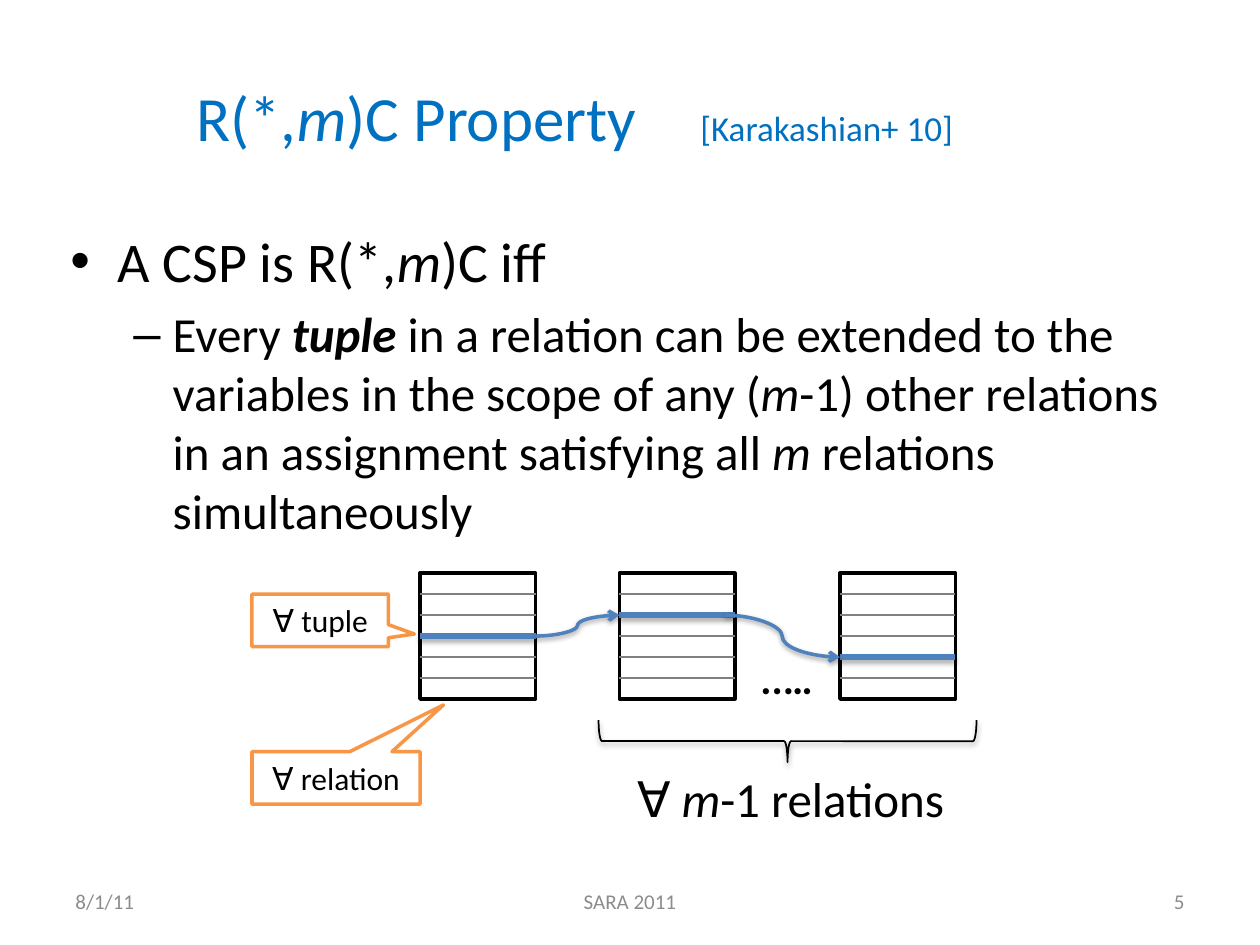
from dataclasses import dataclass

from lxml import etree
from pptx import Presentation
from pptx import util as u
from pptx.dml.color import RGBColor
from pptx.enum import shapes, text
from pptx.oxml import ns

Pt = u.Pt


@dataclass(frozen=True)
class Theme:
    font: str = "Calibri"
    ink: str = "000000"
    paper: str = "FFFFFF"
    title: str = "0070C0"
    accent: str = "4F81BD"
    callout: str = "F79646"
    row: str = "808080"
    footer: str = "8C8C8C"
    title_size: int = 36
    citation_size: int = 20
    body_size: int = 32
    detail_size: int = 28
    dots_size: int = 24
    callout_size: int = 18
    footer_size: int = 12


THEME = Theme()
ROW_HEIGHT, ROW_COUNT = 12, 6
TABLE_WIDTH, TABLE_TOP = 66, 327.5


@dataclass(frozen=True)
class Box:
    left: float
    top: float
    width: float
    height: float

    def lengths(self) -> list:
        return [Pt(value) for value in (self.left, self.top, self.width, self.height)]


@dataclass(frozen=True)
class Run:
    text: str
    size: int
    color: str = THEME.ink
    bold: bool = False
    italic: bool = False


@dataclass(frozen=True)
class Relation:
    left: float
    tuple_row: int

    @property
    def right(self) -> float:
        return self.left + TABLE_WIDTH

    @property
    def tuple_top(self) -> float:
        return TABLE_TOP + self.tuple_row * ROW_HEIGHT


@dataclass(frozen=True)
class Label:
    box: Box
    runs: tuple
    frame: dict
    align: text.PP_ALIGN = text.PP_ALIGN.LEFT


@dataclass(frozen=True)
class Callout:
    box: Box
    text: str
    tip: tuple


def apply_format(target, values: dict) -> None:
    for name, value in values.items():
        setattr(target, name, value)


def write_runs(paragraph, runs: tuple) -> None:
    for item in runs:
        run = paragraph.add_run()
        run.text = item.text
        apply_format(run.font, {"name": THEME.font, "size": Pt(item.size),
                                "bold": item.bold, "italic": item.italic})
        run.font.color.rgb = RGBColor.from_string(item.color)


def place(shape, box: Box) -> None:
    apply_format(shape, dict(zip(("left", "top", "width", "height"), box.lengths())))


def style_line(shape, color: str, width: float) -> None:
    shape.line.color.rgb = RGBColor.from_string(color)
    shape.line.width = Pt(width)


def set_effect(shape, distance: float = 0) -> None:
    effects = etree.SubElement(shape._element.spPr, ns.qn("a:effectLst"))
    if distance:
        shadow = etree.SubElement(effects, ns.qn("a:outerShdw"), blurRad=str(Pt(3.1)),
                                  dist=str(Pt(distance)), dir="5400000", rotWithShape="0")
        color = etree.SubElement(shadow, ns.qn("a:srgbClr"), val=THEME.ink)
        etree.SubElement(color, ns.qn("a:alpha"), val="37000")


def draw_outline(slide, kind, box: Box, color: str, width: float):
    shape = slide.shapes.add_shape(kind, *box.lengths())
    shape.shadow.inherit = False
    shape.fill.solid()
    shape.fill.fore_color.rgb = RGBColor.from_string(THEME.paper)
    style_line(shape, color, width)
    return shape


def draw_relation(slide, relation: Relation) -> None:
    box = Box(relation.left, TABLE_TOP, TABLE_WIDTH, ROW_COUNT * ROW_HEIGHT)
    frame = draw_outline(slide, shapes.MSO_SHAPE.RECTANGLE, box, THEME.ink, 2)
    for row in range(1, ROW_COUNT):
        top = Pt(TABLE_TOP + row * ROW_HEIGHT)
        line = slide.shapes.add_connector(shapes.MSO_CONNECTOR.STRAIGHT,
                                          Pt(relation.left), top, Pt(relation.right), top)
        if row * 2 == ROW_COUNT:
            line.begin_connect(frame, 1)
            line.end_connect(frame, 3)
        chosen = row == relation.tuple_row
        style_line(line, THEME.accent if chosen else THEME.row, 3 if chosen else 0.75)
        set_effect(line, 1.8 if chosen else 0)


def draw_extension(slide, source: Relation, target: Relation, overlap: float) -> None:
    curve = slide.shapes.add_connector(shapes.MSO_CONNECTOR.CURVE,
                                       Pt(source.right - overlap), Pt(source.tuple_top),
                                       Pt(target.left), Pt(target.tuple_top))
    style_line(curve, THEME.accent, 2)
    etree.SubElement(curve.line._get_or_add_ln(), ns.qn("a:tailEnd"), type="arrow")
    set_effect(curve, 1.6)


def draw_brace(slide, box: Box) -> None:
    brace = slide.shapes.add_shape(shapes.MSO_SHAPE.RIGHT_BRACE, *box.lengths())
    brace.rotation = 90
    brace.adjustments[0] = 0.083
    brace.fill.background()
    style_line(brace, THEME.ink, 1)
    set_effect(brace, 1.6)


def draw_label(slide, label: Label) -> None:
    frame = slide.shapes.add_textbox(*label.box.lengths()).text_frame
    apply_format(frame, label.frame)
    frame.paragraphs[0].alignment = label.align
    write_runs(frame.paragraphs[0], label.runs)


def draw_callout(slide, callout: Callout) -> None:
    shape = draw_outline(slide, shapes.MSO_SHAPE.RECTANGULAR_CALLOUT, callout.box,
                         THEME.callout, 2)
    for index, value in enumerate(callout.tip):
        shape.adjustments[index] = value
    frame = shape.text_frame
    apply_format(frame, {"margin_left": 0, "margin_right": 0, "margin_top": 0,
                         "margin_bottom": 0, "word_wrap": True,
                         "vertical_anchor": text.MSO_ANCHOR.MIDDLE})
    frame.paragraphs[0].alignment = text.PP_ALIGN.CENTER
    write_runs(frame.paragraphs[0], (Run(callout.text, THEME.callout_size),))


def fill_title(title) -> None:
    place(title, Box(33, 21.5, 648, 90))
    title.text_frame.vertical_anchor = text.MSO_ANCHOR.MIDDLE
    paragraph = title.text_frame.paragraphs[0]
    paragraph.alignment = text.PP_ALIGN.LEFT
    tabs = etree.SubElement(paragraph._p.get_or_add_pPr(), ns.qn("a:tabLst"))
    for position in (72, 360):
        etree.SubElement(tabs, ns.qn("a:tab"), pos=str(Pt(position)), algn="l")
    size, color = THEME.title_size, THEME.title
    write_runs(paragraph, (Run("\tR(*,", size, color), Run("m", size, color, italic=True),
                           Run(")C Property\t", size, color),
                           Run("[Karakashian+ 10]", THEME.citation_size, color)))


def fill_body(body) -> None:
    place(body, Box(33, 126, 648, 356.5))
    size, detail = THEME.body_size, THEME.detail_size
    m = Run("m", detail, italic=True)
    write_runs(body.text_frame.paragraphs[0],
               (Run("A CSP is R(*,", size), Run("m", size, italic=True), Run(")C iff", size)))
    paragraph = body.text_frame.add_paragraph()
    paragraph.level = 1
    write_runs(paragraph, (
        Run("Every ", detail), Run("tuple ", detail, bold=True, italic=True),
        Run("in a relation can be extended to the variables in the scope of any (", detail), m,
        Run("-1) other relations in an assignment satisfying all ", detail), m,
        Run(" relations simultaneously", detail)))


def main() -> None:
    presentation = Presentation()
    presentation.slide_width, presentation.slide_height = Pt(720), Pt(540)
    slide = presentation.slides.add_slide(presentation.slide_layouts[1])
    fill_title(slide.shapes.title)
    fill_body(slide.placeholders[1])

    footer_frame = {"word_wrap": True, "vertical_anchor": text.MSO_ANCHOR.MIDDLE}
    grow_frame = {"word_wrap": False, "auto_size": text.MSO_AUTO_SIZE.SHAPE_TO_FIT_TEXT}
    footers = (("8/1/11", 36, 168, text.PP_ALIGN.LEFT),
               ("SARA 2011", 246, 228, text.PP_ALIGN.CENTER),
               ("5", 516, 168, text.PP_ALIGN.RIGHT))
    for words, left, width, align in footers:
        draw_label(slide, Label(Box(left, 500.5, width, 28.75),
                                (Run(words, THEME.footer_size, THEME.footer),),
                                footer_frame, align))

    first, second, last = relations = (Relation(240, 3), Relation(354, 2), Relation(480, 4))
    for relation in relations:
        draw_relation(slide, relation)
    draw_extension(slide, first, second, 0)
    draw_extension(slide, second, last, 6)
    draw_brace(slide, Box(438, 315.5, 24, 216))

    size = THEME.detail_size
    draw_label(slide, Label(Box(427.5, 369.5, 44.5, 36),
                            (Run("..…", THEME.dots_size, bold=True),), grow_frame))
    draw_label(slide, Label(Box(357, 435.5, 212.5, 41),
                            (Run("∀ ", size), Run("m", size, italic=True),
                             Run("-1 relations", size)), grow_frame))
    for callout in (Callout(Box(144, 339.5, 78, 30), "∀ tuple", (0.69, 0.26)),
                    Callout(Box(144, 429.5, 96, 30), "∀ relation", (0.64, -1.39))):
        draw_callout(slide, callout)
    presentation.save("out.pptx")


if __name__ == "__main__":
    main()
